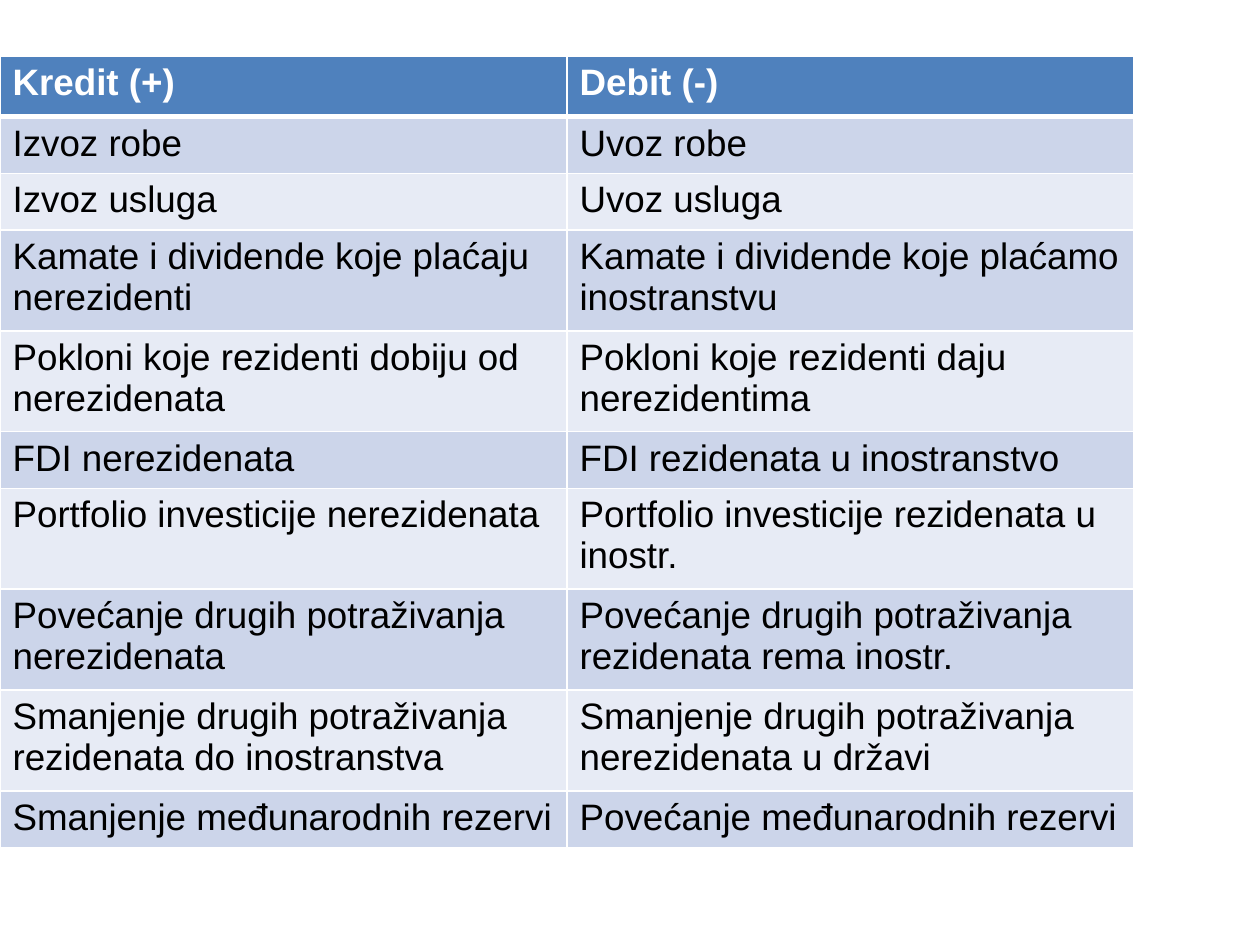
"""Build a slide with a two-column table of credit and debit entries."""

from dataclasses import dataclass

import lxml.etree
import pptx
import pptx.dml.color
import pptx.oxml.ns
import pptx.table
import pptx.util

COLORS = {
    "header": "4F81BD",
    "odd": "CCD5EA",
    "even": "E7EBF5",
    "border": "FFFFFF",
    "header_text": "FFFFFF",
    "text": "000000",
}
COLUMN_WIDTH = 324
HEADER_HEIGHT = 34.7
LINE_HEIGHTS = {1: 32.4, 2: 57.6}
THIN, THICK = 1, 3


@dataclass(frozen=True)
class Entry:
    credit: str
    debit: str
    lines: int = 1


HEADER = Entry("Kredit (+)", "Debit (-)")
ENTRIES = [
    Entry("Izvoz robe", "Uvoz robe"),
    Entry("Izvoz usluga", "Uvoz usluga"),
    Entry("Kamate i dividende koje plaćaju nerezidenti",
          "Kamate i dividende koje plaćamo inostranstvu", 2),
    Entry("Pokloni koje rezidenti dobiju od nerezidenata",
          "Pokloni koje rezidenti daju nerezidentima", 2),
    Entry("FDI nerezidenata", "FDI rezidenata u inostranstvo"),
    Entry("Portfolio investicije nerezidenata",
          "Portfolio investicije rezidenata u inostr.", 2),
    Entry("Povećanje drugih potraživanja nerezidenata",
          "Povećanje drugih potraživanja rezidenata rema inostr.", 2),
    Entry("Smanjenje drugih potraživanja rezidenata do inostranstva",
          "Smanjenje drugih potraživanja nerezidenata u državi", 2),
    Entry("Smanjenje međunarodnih rezervi", "Povećanje međunarodnih rezervi"),
]


def rgb(name: str) -> pptx.dml.color.RGBColor:
    """Return the named colour."""
    return pptx.dml.color.RGBColor.from_string(COLORS[name])


def write_text(cell: pptx.table._Cell, text: str, *, color: str,
               bold: bool = False, size: float = 21, font: str = "Arial") -> None:
    """Write one formatted paragraph into a cell."""
    span = cell.text_frame.paragraphs[0].add_run()
    span.text = text
    span.font.name = font
    span.font.size = pptx.util.Pt(size)
    span.font.bold = bold
    span.font.color.rgb = rgb(color)


def draw_borders(cell: pptx.table._Cell, top: float, bottom: float) -> None:
    """Add solid borders to all four sides of a cell."""
    qn = pptx.oxml.ns.qn
    properties = cell._tc.get_or_add_tcPr()
    for side, width in (("L", THIN), ("R", THIN), ("T", top), ("B", bottom)):
        line = lxml.etree.SubElement(properties, qn(f"a:ln{side}"),
                                     w=str(pptx.util.Pt(width)))
        fill = lxml.etree.SubElement(line, qn("a:solidFill"))
        lxml.etree.SubElement(fill, qn("a:srgbClr"), val=COLORS["border"])


def draw_row(table: pptx.table.Table, index: int, entry: Entry) -> None:
    """Fill and format one table row."""
    is_header = index == 0
    fill = "header" if is_header else "odd" if index % 2 else "even"
    height = HEADER_HEIGHT if is_header else LINE_HEIGHTS[entry.lines]
    table.rows[index].height = pptx.util.Pt(height)
    for column, text in enumerate((entry.credit, entry.debit)):
        cell = table.cell(index, column)
        draw_borders(cell, top=THICK if index == 1 else THIN,
                     bottom=THICK if is_header else THIN)
        cell.fill.solid()
        cell.fill.fore_color.rgb = rgb(fill)
        write_text(cell, text, color="header_text" if is_header else "text",
                   bold=is_header)


def main() -> None:
    """Create and save the deck."""
    deck = pptx.Presentation()
    deck.slide_width = pptx.util.Pt(720)
    deck.slide_height = pptx.util.Pt(540)
    page = deck.slides.add_slide(deck.slide_layouts[6])
    rows = [HEADER, *ENTRIES]
    height = HEADER_HEIGHT + sum(LINE_HEIGHTS[entry.lines] for entry in ENTRIES)
    table = page.shapes.add_table(
        len(rows), 2, pptx.util.Pt(0), pptx.util.Pt(32),
        pptx.util.Pt(2 * COLUMN_WIDTH), pptx.util.Pt(height)).table
    for index, entry in enumerate(rows):
        draw_row(table, index, entry)
    deck.save("out.pptx")


if __name__ == "__main__":
    main()
